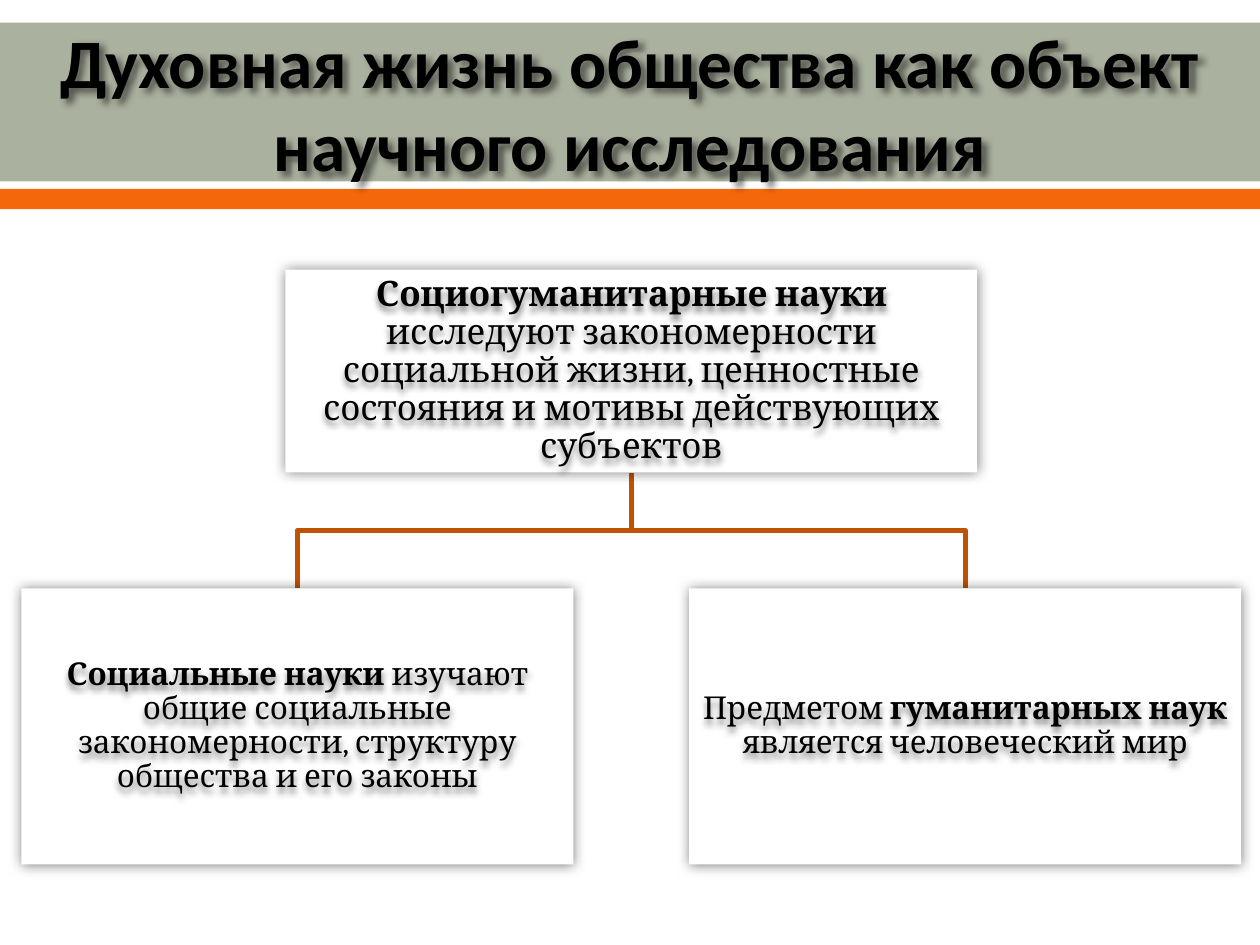
from lxml import etree
from pptx import Presentation
from pptx.dml.color import RGBColor
from pptx.enum.shapes import MSO_SHAPE as SHAPE
from pptx.enum.text import MSO_ANCHOR as ANCHOR, PP_ALIGN as ALIGN
from pptx.oxml.ns import qn
from pptx.util import Inches, Pt

WIDTH, HEIGHT = 10, 7.5
BLACK, WHITE = "000000", "FFFFFF"
BAND, STRIPE, BRANCH = "ABB19F", "F4680B", "C15205"


def color(value):
    return RGBColor.from_string(value)


def add_shadow(sp, blur, dist=0, angle=0, opacity=50):
    sp.shadow.inherit = False
    effects = sp._element.spPr.find(qn("a:effectLst"))
    shadow = etree.SubElement(
        effects, qn("a:outerShdw"), blurRad=str(Pt(blur)),
        dist=str(Pt(dist)), dir=str(angle * 60000), algn="ctr", rotWithShape="0")
    rgb = etree.SubElement(shadow, qn("a:srgbClr"), val=BLACK)
    etree.SubElement(rgb, qn("a:alpha"), val=str(opacity * 1000))


def add_rect(s, box, fill):
    sp = s.shapes.add_shape(SHAPE.RECTANGLE, *map(Inches, box))
    sp.shadow.inherit = False
    sp.fill.solid()
    sp.fill.fore_color.rgb = color(fill)
    sp.line.fill.background()
    return sp


def add_text(s, box, runs, font, size, margins, spacing=None):
    """Place centred text; runs are (text, bold) pairs."""
    sp = s.shapes.add_textbox(*map(Inches, box))
    tf = sp.text_frame
    tf.word_wrap = True
    tf.vertical_anchor = ANCHOR.MIDDLE
    tf.margin_left = tf.margin_right = Inches(margins[0])
    tf.margin_top = tf.margin_bottom = Inches(margins[1])
    p = tf.paragraphs[0]
    p.alignment = ALIGN.CENTER
    p.line_spacing = spacing
    for text, bold in runs:
        r = p.add_run()
        r.text = text
        r.font.name = font
        r.font.size = Pt(size)
        r.font.bold = bold
        r.font.color.rgb = color(BLACK)
    return sp


def add_header(s, box, title):
    left, top, width, height = box
    # Title band and the stripe under it
    add_rect(s, (left, top, width, 1.26), BAND)
    add_rect(s, (left, top + height - 0.16, width, 0.16), STRIPE)
    # Title
    sp = add_text(s, (left, top + 0.02, width, 1.22), [(title, True)],
                  "Calibri", 39.6, (0.1, 0.05))
    add_shadow(sp, 4, 3, 45)


def add_card(s, box, runs, size):
    add_shadow(add_rect(s, box, WHITE), 7.5)
    sp = add_text(s, box, runs, "Cambria", size, (0.01, 0.01), 0.9)
    add_shadow(sp, 4, 3, 90)


def add_branch(s, start, end):
    (x1, y1), (x2, y2) = start, end
    middle = (y1 + y2) / 2
    corners = [(x1, middle), (x2, middle), (x2, y2)]
    builder = s.shapes.build_freeform(Inches(x1), Inches(y1))
    builder.add_line_segments(
        [(Inches(x), Inches(y)) for x, y in corners], close=False)
    sp = builder.convert_to_shape()
    sp.shadow.inherit = False
    sp.fill.background()
    sp.line.color.rgb = color(BRANCH)
    sp.line.width = Pt(3)


def add_tree(s, box, root, leaves):
    left, top, width, height = box
    root_w, root_h = 5.49, 1.61
    leaf_w, leaf_h = 4.38, 2.19
    center = left + width / 2
    leaf_top = top + height - leaf_h
    step = (width - leaf_w) / (len(leaves) - 1)
    lefts = [left + i * step for i in range(len(leaves))]
    # Branches lie behind the cards
    for x in reversed(lefts):
        add_branch(s, (center, top + root_h), (x + leaf_w / 2, leaf_top))
    # Cards
    add_card(s, (center - root_w / 2, top, root_w, root_h), root, 20)
    for x, runs in zip(lefts, leaves):
        add_card(s, (x, leaf_top, leaf_w, leaf_h), runs, 18)


def main():
    prs = Presentation()
    prs.slide_width, prs.slide_height = Inches(WIDTH), Inches(HEIGHT)
    s = prs.slides.add_slide(prs.slide_layouts[6])
    add_header(s, (0, 0.18, WIDTH, 1.48),
               "Духовная жизнь общества как объект научного исследования")
    add_tree(
        s, (0.17, 2.14, 9.68, 4.72),
        [("Социогуманитарные науки ", True),
         ("исследуют закономерности социальной жизни, ценностные состояния "
          "и мотивы действующих субъектов", False)],
        [[("Социальные науки ", True),
          ("изучают общие социальные закономерности, структуру общества "
           "и его законы", False)],
         [("Предметом ", False), ("гуманитарных наук ", True),
          ("является человеческий мир", False)]])
    prs.save("out.pptx")


if __name__ == "__main__":
    main()
